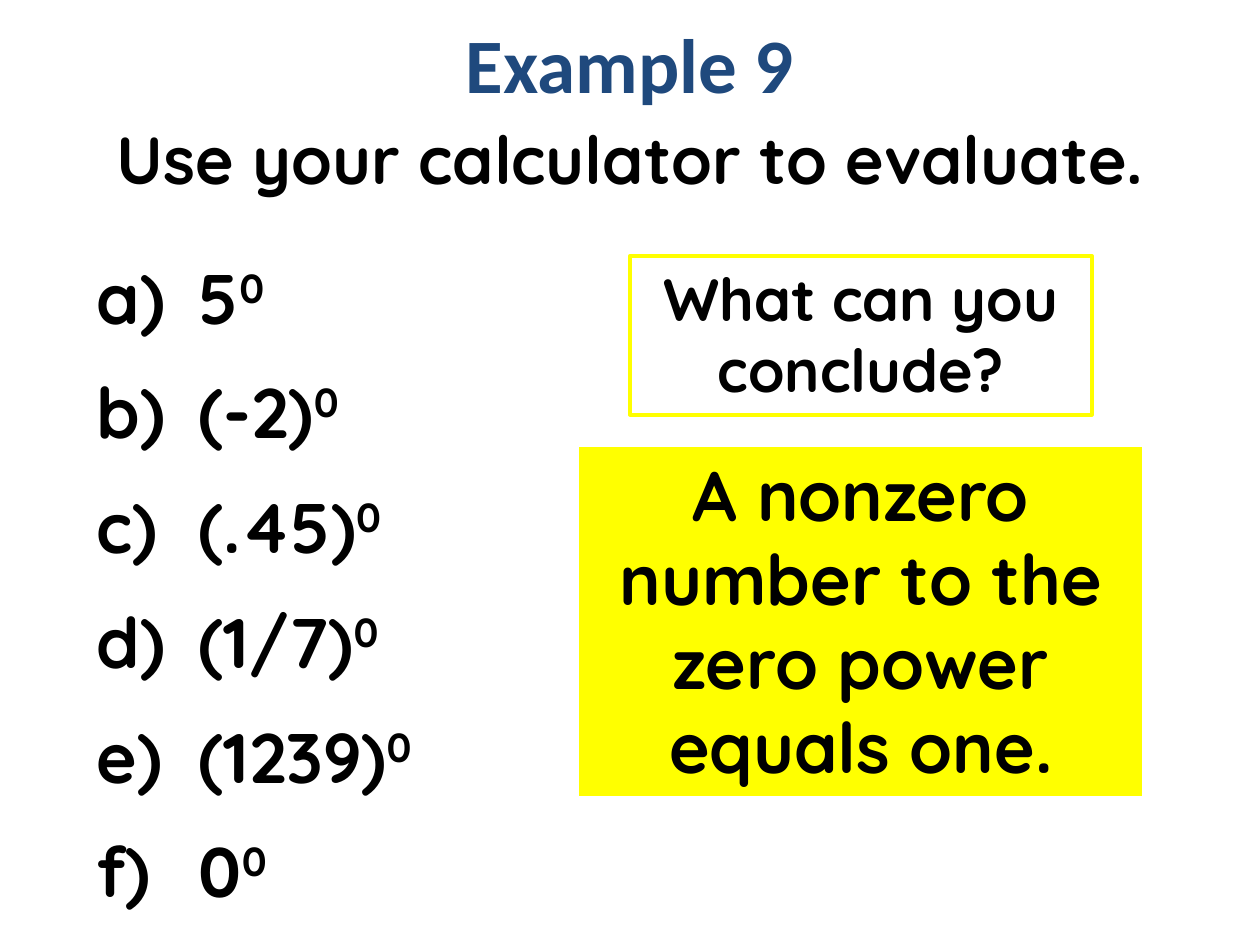
from pptx import Presentation
from pptx.dml.color import RGBColor
from pptx.enum.shapes import MSO_SHAPE
from pptx.enum.text import MSO_ANCHOR, PP_ALIGN
from pptx.oxml.ns import qn
from pptx.util import Cm, Pt
from lxml import etree

RECTANGLE = MSO_SHAPE.RECTANGLE
CENTER = PP_ALIGN.CENTER
LEFT = PP_ALIGN.LEFT
TOP = MSO_ANCHOR.TOP
MIDDLE = MSO_ANCHOR.MIDDLE

COLORS = {"ink": "000000", "heading": "1F497D", "paper": "FFFFFF", "highlight": "FFFF00"}
BODY_FONT = "Quicksand"
HEADING_FONT = "Calibri"
BASES = ["5", "(-2)", "(.45)", "(1/7)", "(1239)", "0"]


class LessonSlide:
    def __init__(self, presentation):
        self.slide = presentation.slides.add_slide(presentation.slide_layouts[6])

    def color(self, name):
        return RGBColor.from_string(COLORS[name])

    def style(self, paragraph, size, font=BODY_FONT, color="ink", alignment=CENTER):
        paragraph.alignment = alignment
        paragraph.font.name = font
        paragraph.font.size = Pt(size)
        paragraph.font.bold = True
        paragraph.font.color.rgb = self.color(color)

    def frame(self, shape, anchor=TOP):
        shape.text_frame.word_wrap = True
        shape.text_frame.vertical_anchor = anchor
        return shape.text_frame

    def text(self, box, wording, size, anchor=TOP, line_spacing=1.0, **style):
        shape = self.slide.shapes.add_textbox(*map(Cm, box))
        paragraph = self.frame(shape, anchor).paragraphs[0]
        paragraph.text = wording
        paragraph.line_spacing = line_spacing
        self.style(paragraph, size, **style)

    def panel(self, box, wording, size, fill, line):
        shape = self.slide.shapes.add_shape(RECTANGLE, *map(Cm, box))
        shape.shadow.inherit = False
        shape.fill.solid()
        shape.fill.fore_color.rgb = self.color(fill)
        shape.line.color.rgb = self.color(line)
        shape.line.width = Pt(2.25)
        paragraph = self.frame(shape).paragraphs[0]
        paragraph.text = wording
        self.style(paragraph, size)

    def lettered_powers(self, box, bases, exponent, size):
        text_frame = self.frame(self.slide.shapes.add_textbox(*map(Cm, box)))
        for index, base in enumerate(bases):
            paragraph = text_frame.add_paragraph() if index else text_frame.paragraphs[0]
            paragraph.line_spacing = 1.2
            paragraph.space_before = Pt(size * 0.2)
            self.style(paragraph, size, alignment=LEFT)
            properties = paragraph._p.get_or_add_pPr()
            properties.set("marL", str(Cm(2.06)))
            properties.set("indent", str(Cm(-2.06)))
            numbering = etree.Element(qn("a:buAutoNum"), type="alphaLcParenR")
            properties.find(qn("a:defRPr")).addprevious(numbering)
            paragraph.add_run().text = base
            power = paragraph.add_run()
            power.text = exponent
            power.font._element.set("baseline", "30000")


def main():
    presentation = Presentation()
    presentation.slide_width = Cm(25.4)
    presentation.slide_height = Cm(19.05)
    lesson = LessonSlide(presentation)
    lesson.text((1.9, 2.12, 21.6, 2.12), "Use your calculator to evaluate.", 38, anchor=MIDDLE)
    lesson.lettered_powers((1.7, 4.66, 21.38, 13.97), BASES, "0", 40)
    lesson.panel((12.7, 5.16, 9.31, 3.2), "What can you conclude?", 34, "paper", "highlight")
    lesson.panel((11.64, 8.97, 11.43, 7.11), "A nonzero number to the zero power equals one.",
                 40, "highlight", "paper")
    lesson.text((7.62, 0.42, 10.16, 1.48), "Example 9", 44, line_spacing=0.9,
                font=HEADING_FONT, color="heading")
    presentation.save("out.pptx")


if __name__ == "__main__":
    main()
